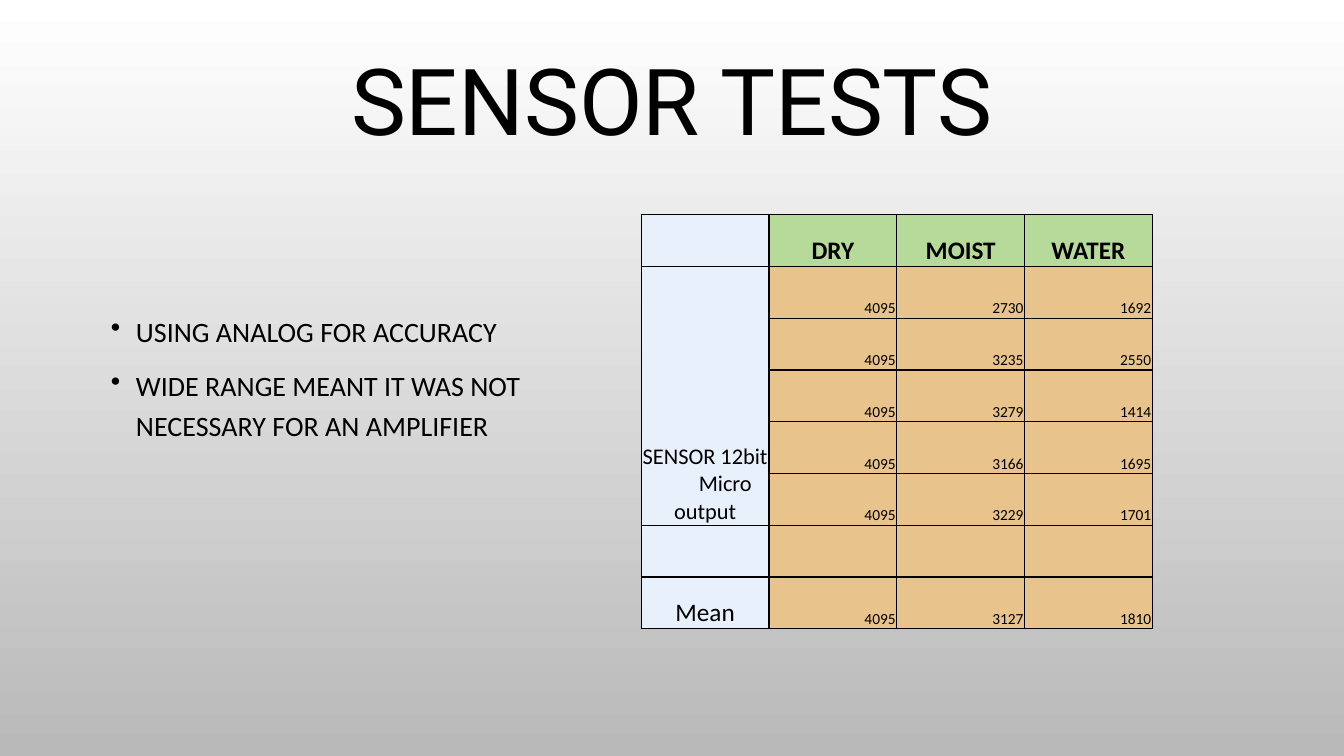
from lxml.etree import SubElement
from pptx import Presentation
from pptx.dml.color import RGBColor
from pptx.enum.text import MSO_ANCHOR as ANCHOR, PP_ALIGN as ALIGN
from pptx.oxml.ns import qn
from pptx.util import Pt

PX = 9144
COLORS = {
    "ink": "000000",
    "sky": "FFFFFF",
    "ground": "B9B9B9",
    "label": "E8F0FC",
    "header": "B6DA9A",
    "reading": "E8C48C",
}
TITLE = {"name": "Roboto", "size": Pt(66), "bold": False}
BULLET = {"name": "Calibri", "size": Pt(20), "bold": False}
HEADER = {"name": "Calibri", "size": Pt(18), "bold": True}
SENSOR = {"name": "Calibri", "size": Pt(16), "bold": False}
READING = {"name": "Calibri", "size": Pt(11), "bold": False}
MEAN = {"name": "Calibri", "size": Pt(18), "bold": False}

STATES = ["DRY", "MOIST", "WATER"]
READINGS = [
    [4095, 2730, 1692],
    [4095, 3235, 2550],
    [4095, 3279, 1414],
    [4095, 3166, 1695],
    [4095, 3229, 1701],
]
MEANS = [4095, 3127, 1810]
SENSOR_LINES = ["SENSOR 12bit", "Micro", "output"]
POINTS = [
    "USING ANALOG FOR ACCURACY",
    "WIDE RANGE MEANT IT WAS NOT NECESSARY FOR AN AMPLIFIER",
]


def rgb(key):
    return RGBColor.from_string(COLORS[key])


def px(*lengths):
    return [length * PX for length in lengths]


def apply(target, values):
    for key, value in values.items():
        setattr(target, key, value)


def write(paragraph, text, font, **layout):
    run = paragraph.add_run()
    run.text = text
    apply(run.font, font)
    run.font.color.rgb = rgb("ink")
    apply(paragraph, layout)


def paint_background(slide):
    fill = slide.background.fill
    fill.gradient()
    fill.gradient_angle = 270
    for stop, key, position in zip(fill.gradient_stops, ("sky", "ground"), (0, 1)):
        stop.color.rgb = rgb(key)
        stop.position = position


def add_title(slide, box):
    frame = slide.shapes.add_textbox(*px(*box)).text_frame
    apply(frame, {"word_wrap": True, "vertical_anchor": ANCHOR.MIDDLE})
    write(frame.paragraphs[0], "SENSOR TESTS", TITLE,
          alignment=ALIGN.CENTER, line_spacing=0.9)


def add_points(slide, box):
    frame = slide.shapes.add_textbox(*px(*box)).text_frame
    frame.word_wrap = True
    for index, point in enumerate(POINTS):
        paragraph = frame.add_paragraph() if index else frame.paragraphs[0]
        properties = paragraph._p.get_or_add_pPr()
        properties.set("marL", str(25 * PX))
        properties.set("indent", str(-25 * PX))
        bullet_color = SubElement(properties, qn("a:buClr"))
        SubElement(bullet_color, qn("a:srgbClr"), val=COLORS["ink"])
        SubElement(properties, qn("a:buChar"), char="•")
        write(paragraph, point, BULLET, line_spacing=1.2,
              space_before=Pt(10 if index else 0))


def style_cell(cell, color):
    properties = cell._tc.get_or_add_tcPr()
    for side in ("lnL", "lnR", "lnT", "lnB"):
        line = SubElement(properties, qn(f"a:{side}"), w=str(Pt(1)))
        line_fill = SubElement(line, qn("a:solidFill"))
        SubElement(line_fill, qn("a:srgbClr"), val=COLORS["ink"])
    cell.fill.solid()
    cell.fill.fore_color.rgb = rgb(color)


def write_cell(cell, text, font, alignment):
    margin = PX
    apply(cell, {"vertical_anchor": ANCHOR.BOTTOM, "margin_left": margin,
                 "margin_right": margin, "margin_top": margin, "margin_bottom": 0})
    write(cell.text_frame.paragraphs[0], text, font, alignment=alignment)


def add_readings(slide, box):
    rows = len(READINGS) + 3
    table = slide.shapes.add_table(rows, len(STATES) + 1, *px(*box)).table
    apply(table, {"first_row": False, "horz_banding": False})
    for row in range(rows):
        for column in range(len(STATES) + 1):
            color = "label" if column == 0 else "reading" if row else "header"
            style_cell(table.cell(row, column), color)

    for column, state in enumerate(STATES, 1):
        write_cell(table.cell(0, column), state, HEADER, ALIGN.CENTER)
    numbered_rows = [*enumerate(READINGS, 1), (rows - 1, MEANS)]
    for row, values in numbered_rows:
        for column, value in enumerate(values, 1):
            write_cell(table.cell(row, column), str(value), READING, ALIGN.RIGHT)
    write_cell(table.cell(rows - 1, 0), "Mean", MEAN, ALIGN.CENTER)

    sensor = table.cell(1, 0)
    sensor.merge(table.cell(len(READINGS), 0))
    write_cell(sensor, SENSOR_LINES[0], SENSOR, ALIGN.CENTER)
    for line in SENSOR_LINES[1:]:
        write(sensor.text_frame.add_paragraph(), line, SENSOR, alignment=ALIGN.CENTER)
    micro = sensor.text_frame.paragraphs[1]
    micro._p.get_or_add_pPr().set("marL", str(40 * PX))


def main():
    deck = Presentation()
    deck.slide_width, deck.slide_height = px(1333, 750)
    slide = deck.slides.add_slide(deck.slide_layouts[6])
    paint_background(slide)
    add_title(slide, (100, 30, 1133, 149))
    add_points(slide, (100, 300, 448, 160))
    add_readings(slide, (636, 213, 507, 411))
    deck.save("out.pptx")


if __name__ == "__main__":
    main()
